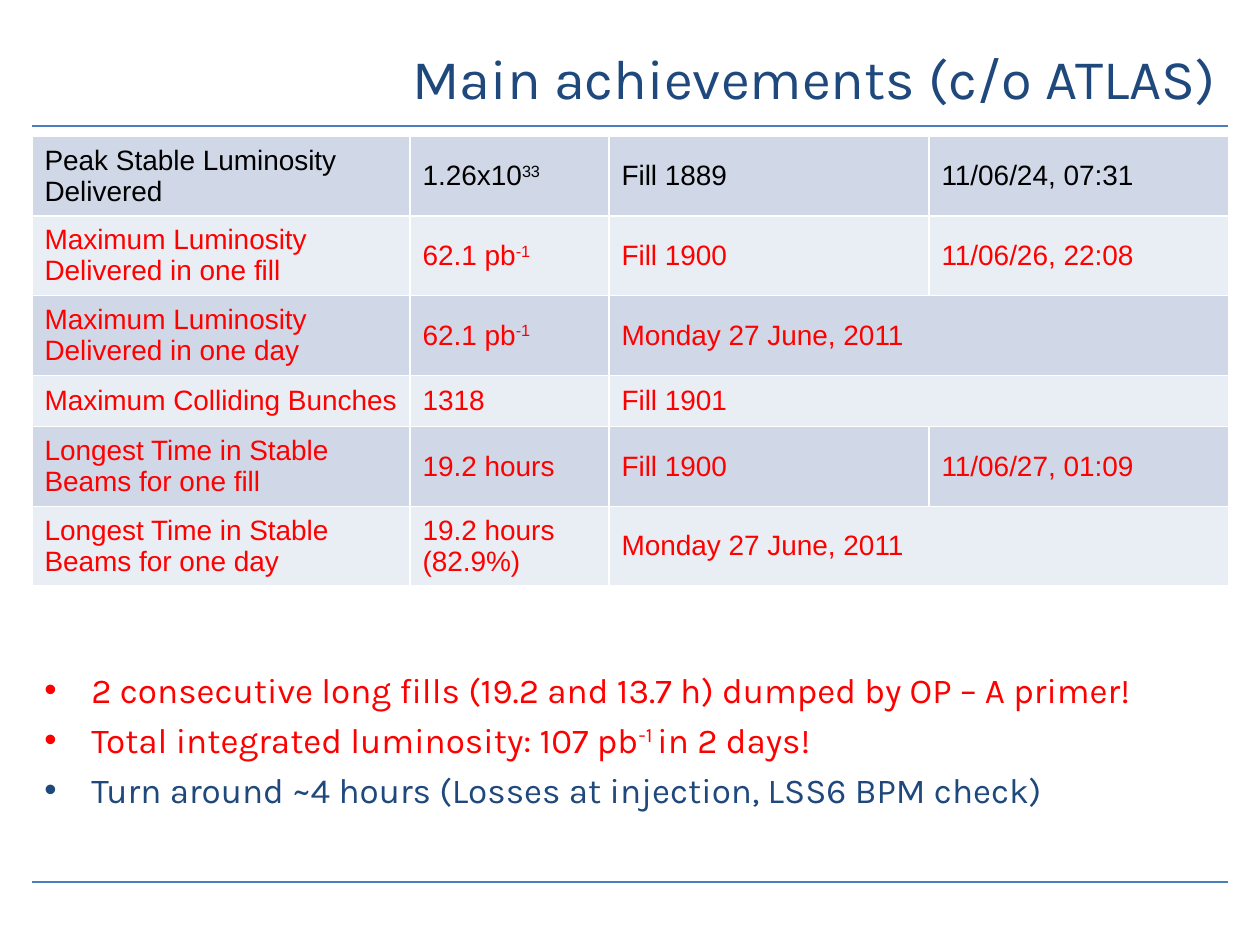
import pptx
import pptx.dml.color
import pptx.enum.shapes
import pptx.enum.text
import pptx.oxml
import pptx.util
from lxml import etree

NAMESPACE = "http://schemas.openxmlformats.org/drawingml/2006/main"
SCALE = 914400 / 126  # EMU per px
NAVY, RED, BLACK, WHITE, RULE = "1F497D", "FF0000", "000000", "FFFFFF", "4B7EBC"
MIDDLE = pptx.enum.text.MSO_ANCHOR.MIDDLE


def px(*lengths):
    return [pptx.util.Emu(round(length * SCALE)) for length in lengths]


def write(para, text, size, font, color):
    """Write text into a paragraph; parts between ^ marks are superscript."""
    for index, part in enumerate(text.split("^")):
        if not part:
            continue
        span = para.add_run()
        span.text = part
        span.font.size = pptx.util.Pt(size)
        span.font.name = font
        span.font.color.rgb = pptx.dml.color.RGBColor.from_string(color)
        if index % 2:
            span._r.get_or_add_rPr().set("baseline", "30000")


deck = pptx.Presentation()
deck.slide_width, deck.slide_height = px(1260, 945)
page = deck.slides.add_slide(deck.slide_layouts[6])

# Rules above and below the content
for y in (126, 882):
    rule = page.shapes.add_connector(
        pptx.enum.shapes.MSO_CONNECTOR.STRAIGHT, *px(32, y, 1228, y))
    rule.line.color.rgb = pptx.dml.color.RGBColor.from_string(RULE)
    rule.line.width = pptx.util.Pt(1.5)
    etree.SubElement(rule._element.spPr, f"{{{NAMESPACE}}}effectLst")

# Title
title = page.shapes.add_textbox(*px(221, 22, 1008, 110)).text_frame
title.word_wrap = True
title.vertical_anchor = MIDDLE
title.paragraphs[0].alignment = pptx.enum.text.PP_ALIGN.RIGHT
write(title.paragraphs[0], "Main achievements (c/o ATLAS)", size=32, font="Karla", color=NAVY)

# Table of records; a row with three entries merges its last two columns
records = [
    ("Peak Stable Luminosity Delivered", "1.26x10^33", "Fill 1889", "11/06/24, 07:31"),
    ("Maximum Luminosity Delivered in one fill", "62.1 pb^-1", "Fill 1900", "11/06/26, 22:08"),
    ("Maximum Luminosity Delivered in one day", "62.1 pb^-1", "Monday 27 June, 2011"),
    ("Maximum Colliding Bunches", "1318", "Fill 1901"),
    ("Longest Time in Stable Beams for one fill", "19.2 hours", "Fill 1900", "11/06/27, 01:09"),
    ("Longest Time in Stable Beams for one day", "19.2 hours (82.9%)", "Monday 27 June, 2011"),
]
widths = px(378, 199, 320, 300)
table = page.shapes.add_table(len(records), len(widths), *px(32, 136, 1197, 306)).table
for column, width in zip(table.columns, widths):
    column.width = width
for row, record in enumerate(records):
    table.rows[row].height = px(51)[0]
    for column in range(len(widths)):
        cell = table.cell(row, column)
        cell.vertical_anchor = MIDDLE
        properties = cell._tc.get_or_add_tcPr()
        for side in ("lnL", "lnR", "lnT", "lnB"):
            properties.append(pptx.oxml.parse_xml(
                f'<a:{side} xmlns:a="{NAMESPACE}" w="12700"><a:solidFill>'
                f'<a:srgbClr val="{WHITE}"/></a:solidFill></a:{side}>'))
        cell.fill.solid()
        cell.fill.fore_color.rgb = pptx.dml.color.RGBColor.from_string(
            "E9EDF4" if row % 2 else "D0D8E8")
        if column < len(record):
            write(cell.text_frame.paragraphs[0], record[column], size=16, font="Arial",
                  color=RED if row else BLACK)
    if len(record) == 3:
        table.cell(row, 2).merge(table.cell(row, 3))

# Bulleted remarks
remarks = [
    ("2 consecutive long fills (19.2 and 13.7 h) dumped by OP – A primer!", RED),
    ("Total integrated luminosity: 107 pb^-1 ^in 2 days!", RED),
    ("Turn around ~4 hours (Losses at injection, LSS6 BPM check)", NAVY),
]
box = page.shapes.add_textbox(*px(32, 662, 1197, 199)).text_frame
box.word_wrap = True
indent = px(47)[0]
for index, (text, color) in enumerate(remarks):
    para = box.add_paragraph() if index else box.paragraphs[0]
    properties = para._p.get_or_add_pPr()
    properties.set("marL", str(indent))
    properties.set("indent", str(-indent))
    etree.SubElement(properties, f"{{{NAMESPACE}}}buFont", typeface="Arial")
    etree.SubElement(properties, f"{{{NAMESPACE}}}buChar", char="•")
    if index:
        para.space_before = pptx.util.Pt(4.7)
    write(para, text, size=20, font="Karla", color=color)

deck.save("out.pptx")
